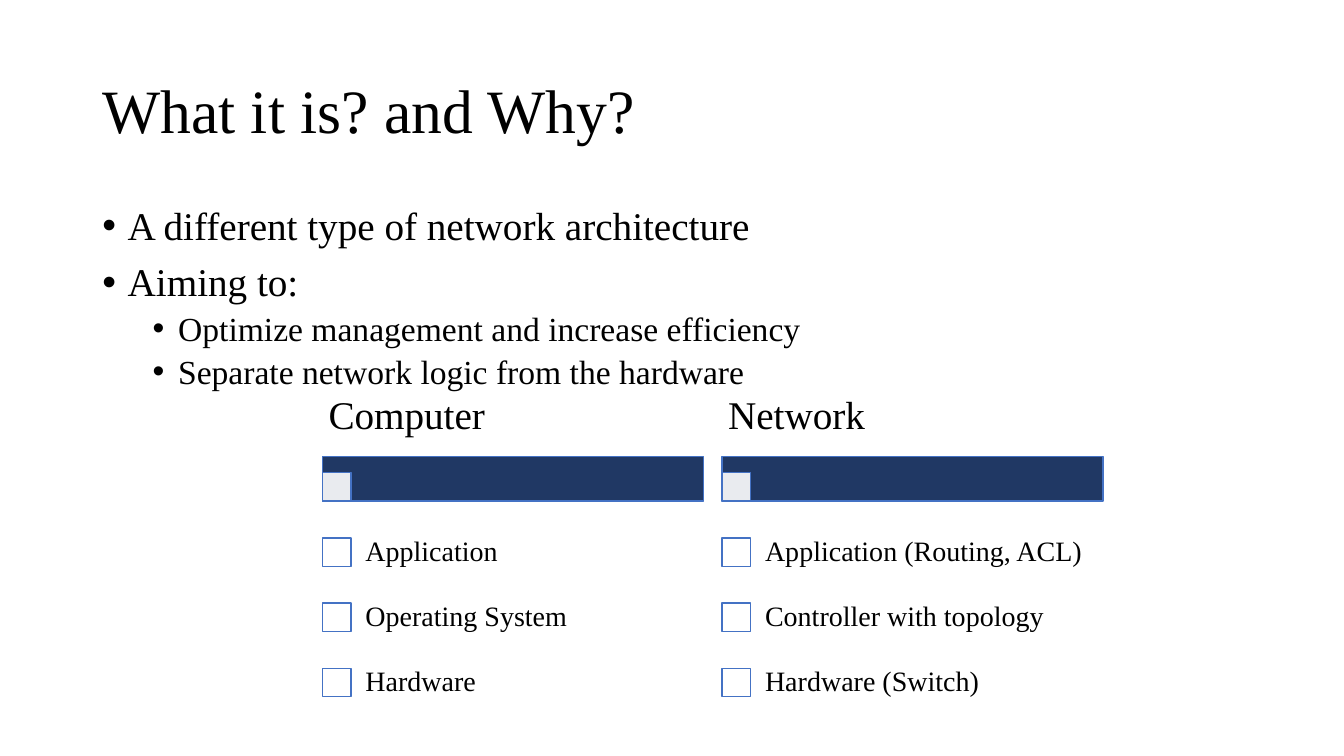
import pptx
import pptx.util
import pptx.dml.color
import pptx.enum.shapes
import pptx.enum.text
import pptx.oxml.ns
import lxml.etree

Cm = pptx.util.Cm
Pt = pptx.util.Pt
Anchor = pptx.enum.text.MSO_ANCHOR

TITLE = "What it is? and Why?"
BULLETS = [
    (0, "A different type of network architecture"),
    (0, "Aiming to:"),
    (1, "Optimize management and increase efficiency"),
    (1, "Separate network logic from the hardware"),
]
COLUMNS = [
    ("Computer", ["Application", "Operating System", "Hardware"]),
    ("Network", ["Application (Routing, ACL)", "Controller with topology", "Hardware (Switch)"]),
]
BULLET_STYLES = [
    {"size": 28, "before": 10, "margin": 0.64},
    {"size": 24, "before": 5, "margin": 1.91},
]
FONT = "Times New Roman"
BLACK, WHITE, NAVY, BLUE = "000000", "FFFFFF", "203864", "4472C4"

MARGIN, CONTENT_WIDTH = 2.33, 29.21
COLUMN_LEFT, COLUMN_STEP, COLUMN_WIDTH = 8.13, 10.07, 9.6
HEADING_TOP, HEADING_HEIGHT = 9.48, 2.03
BAR_TOP, BAR_HEIGHT = 11.51, 1.12
ROW_TOP, ROW_HEIGHT = 13.1, 1.64
SQUARE, LABEL_OFFSET = 0.72, 0.68


def color(value):
    return pptx.dml.color.RGBColor.from_string(value)


def format_paragraph(para, size):
    para.line_spacing = 0.9
    for span in para.runs:
        span.font.name = FONT
        span.font.size = Pt(size)
        span.font.color.rgb = color(BLACK)


def add_text(page, bounds, text, size, insets=(0.25, 0.13), anchor=Anchor.MIDDLE):
    box = page.shapes.add_textbox(*map(Cm, bounds))
    frame = box.text_frame
    frame.word_wrap = True
    frame.vertical_anchor = anchor
    frame.margin_left = frame.margin_right = Cm(insets[0])
    frame.margin_top = frame.margin_bottom = Cm(insets[1])
    frame.text = text
    for para in frame.paragraphs:
        format_paragraph(para, size)
    return box


def add_bullet(para, level):
    style = BULLET_STYLES[level]
    para.level = level
    format_paragraph(para, style["size"])
    para.space_before = Pt(style["before"])
    properties = para._p.get_or_add_pPr()
    properties.set("marL", str(Cm(style["margin"])))
    properties.set("indent", str(Cm(-0.64)))
    font = lxml.etree.SubElement(properties, pptx.oxml.ns.qn("a:buFont"))
    font.set("typeface", "Arial")
    bullet = lxml.etree.SubElement(properties, pptx.oxml.ns.qn("a:buChar"))
    bullet.set("char", "•")


def add_rectangle(page, bounds, fill, opacity=100):
    shape = page.shapes.add_shape(
        pptx.enum.shapes.MSO_SHAPE.RECTANGLE, *map(Cm, bounds))
    shape.shadow.inherit = False
    shape.fill.solid()
    shape.fill.fore_color.rgb = color(fill)
    shape.line.color.rgb = color(BLUE)
    shape.line.width = Pt(1)
    if opacity < 100:
        tint = shape._element.spPr.find(".//" + pptx.oxml.ns.qn("a:srgbClr"))
        alpha = lxml.etree.SubElement(tint, pptx.oxml.ns.qn("a:alpha"))
        alpha.set("val", str(opacity * 1000))


def add_column(page, left, heading, layers):
    add_rectangle(page, (left, BAR_TOP, COLUMN_WIDTH, BAR_HEIGHT), NAVY)
    badge_top = BAR_TOP + BAR_HEIGHT - SQUARE
    add_rectangle(page, (left, badge_top, SQUARE, SQUARE), WHITE, 90)
    add_text(page, (left, HEADING_TOP, COLUMN_WIDTH, HEADING_HEIGHT),
             heading, 28, (0.15, 0.1))
    for row, layer in enumerate(layers):
        top = ROW_TOP + row * ROW_HEIGHT
        square_top = top + (ROW_HEIGHT - SQUARE) / 2
        add_rectangle(page, (left, square_top, SQUARE, SQUARE), WHITE)
        add_text(page, (left + LABEL_OFFSET, top, COLUMN_WIDTH - LABEL_OFFSET, ROW_HEIGHT),
                 layer, 20, (0.4, 0.4))


def main():
    deck = pptx.Presentation()
    deck.slide_width, deck.slide_height = Cm(33.87), Cm(19.05)
    page = deck.slides.add_slide(deck.slide_layouts[6])

    add_text(page, (MARGIN, 1.01, CONTENT_WIDTH, 3.68), TITLE, 44)
    body = add_text(page, (MARGIN, 5.07, CONTENT_WIDTH, 12.09),
                    "\n".join(text for level, text in BULLETS), 28, anchor=Anchor.TOP)
    for para, (level, text) in zip(body.text_frame.paragraphs, BULLETS):
        add_bullet(para, level)

    for index, (heading, layers) in enumerate(COLUMNS):
        add_column(page, COLUMN_LEFT + index * COLUMN_STEP, heading, layers)

    deck.save("out.pptx")


if __name__ == "__main__":
    main()
